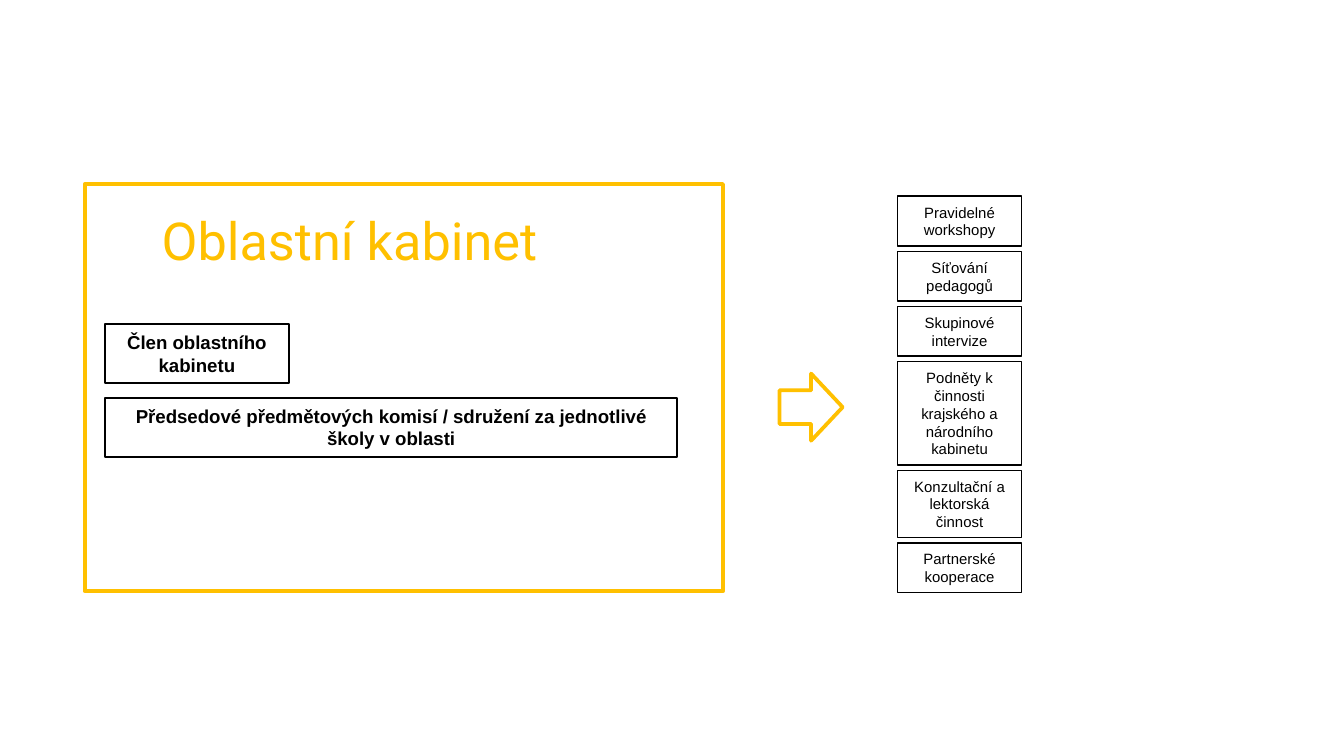
from pptx import Presentation
from pptx.dml.color import RGBColor
from pptx.enum.shapes import MSO_SHAPE as Shape
from pptx.enum.text import MSO_ANCHOR as Anchor, MSO_AUTO_SIZE as AutoSize, PP_ALIGN as Align
from pptx.util import Pt

PX = 4572  # EMU per px, 200 px to the inch
GOLD, BLACK, WHITE = "FFC000", "000000", "FFFFFF"

# Content: boxes are left, top, width, height in px
TITLE = "Oblastní kabinet"
TITLE_BOX = (156, 300, 728, 114)
FRAME_BOX = (126, 274, 950, 606)
ARROW_BOX = (1160, 556, 94, 100)
MEMBERS = [
    ("Člen oblastního kabinetu", (156, 482, 274, 88)),
    ("Předsedové předmětových komisí / sdružení za jednotlivé školy v oblasti",
     (156, 592, 852, 88)),
]
ACTIVITIES = [  # text, height
    ("Pravidelné workshopy", 74),
    ("Síťování pedagogů", 74),
    ("Skupinové intervize", 74),
    ("Podněty k činnosti krajského a národního kabinetu", 154),
    ("Konzultační a lektorská činnost", 100),
    ("Partnerské kooperace", 74),
]
ACTIVITY_LEFT, ACTIVITY_TOP, ACTIVITY_WIDTH, ACTIVITY_GAP = 1336, 292, 184, 8


def color(value):
    return RGBColor.from_string(value)


def scaled(box):
    return [length * PX for length in box]


def write(shape, text, size, font="Arial", ink=BLACK, bold=False, anchor=Anchor.MIDDLE):
    frame = shape.text_frame
    frame.text = text
    frame.word_wrap = True
    frame.auto_size = AutoSize.NONE
    frame.vertical_anchor = anchor
    frame.margin_left = frame.margin_right = frame.margin_top = frame.margin_bottom = 10 * PX
    para = frame.paragraphs[0]
    para.alignment = Align.CENTER
    para.line_spacing = 1.0
    para.space_before = Pt(0)
    para.font.name = font
    para.font.size = Pt(size)
    para.font.bold = bold
    para.font.color.rgb = color(ink)


def outline(shapes, kind, box, ink, weight, fill=WHITE):
    shape = shapes.add_shape(kind, *scaled(box))
    shape.shadow.inherit = False
    if fill:
        shape.fill.solid()
        shape.fill.fore_color.rgb = color(fill)
    else:
        shape.fill.background()
    shape.line.color.rgb = color(ink)
    shape.line.width = Pt(weight)
    return shape


deck = Presentation()
deck.slide_width, deck.slide_height = scaled((2000, 1125))
page = deck.slides.add_slide(deck.slide_layouts[5])

# Title
title = page.shapes.title
title.left, title.top, title.width, title.height = scaled(TITLE_BOX)
write(title, TITLE, 28, "Roboto", GOLD, anchor=Anchor.TOP)

# Members inside the cabinet frame
for text, box in MEMBERS:
    write(outline(page.shapes, Shape.RECTANGLE, box, BLACK, 1.25), text, 10, bold=True)
outline(page.shapes, Shape.RECTANGLE, FRAME_BOX, GOLD, 2, fill=None)

# Arrow to the activities
outline(page.shapes, Shape.RIGHT_ARROW, ARROW_BOX, GOLD, 2)

# Stacked activities
activities = page.shapes.add_group_shape()
top = ACTIVITY_TOP
for text, height in ACTIVITIES:
    box = (ACTIVITY_LEFT, top, ACTIVITY_WIDTH, height)
    write(outline(activities.shapes, Shape.RECTANGLE, box, BLACK, 0.75), text, 8)
    top += height + ACTIVITY_GAP

deck.save("out.pptx")
